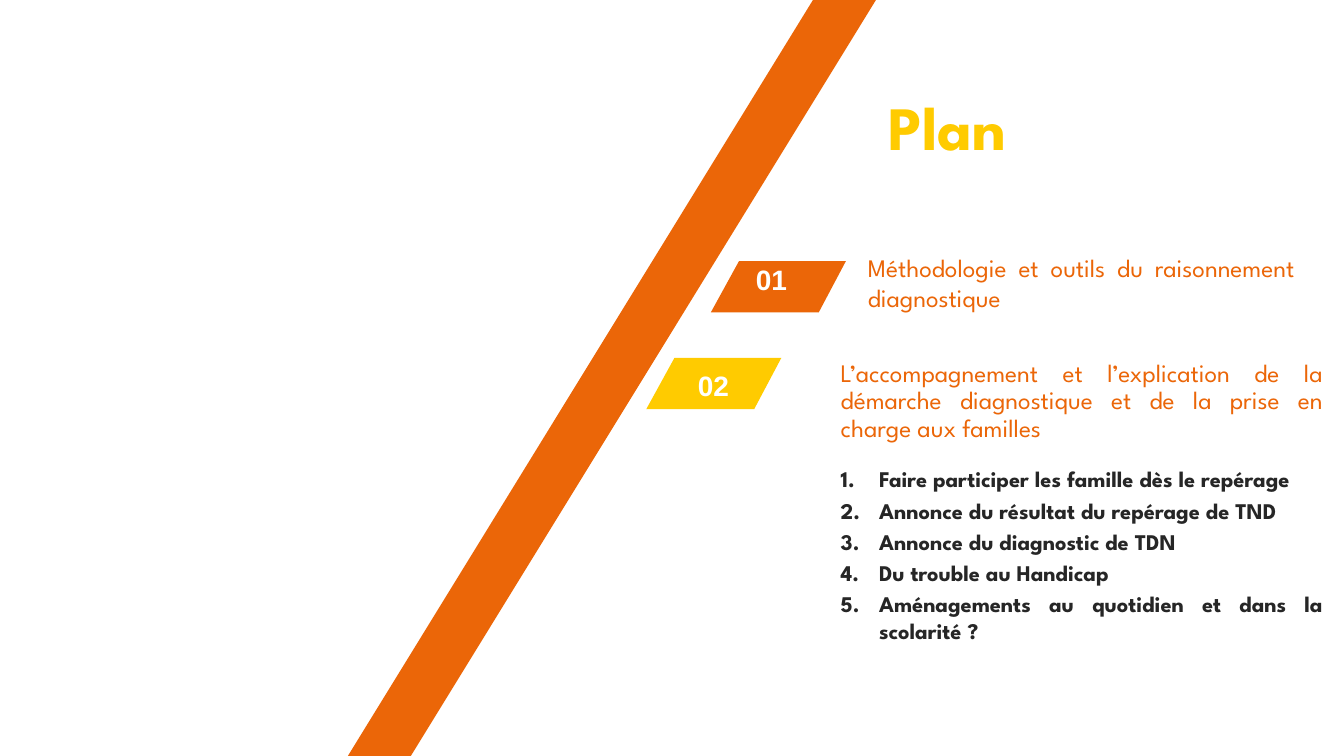
"""Build the plan slide: a slanted band, a title, two numbered tags and a list."""
from lxml.etree import SubElement
from pptx import Presentation
from pptx.dml.color import RGBColor
from pptx.enum.shapes import MSO_SHAPE as Shape
from pptx.enum.text import MSO_ANCHOR as Anchor, PP_ALIGN as Align
from pptx.oxml.ns import qn
from pptx.util import Inches, Pt

ORANGE, YELLOW, WHITE, DARK = "EB6608", "FFCB00", "FFFFFF", "262626"
SPARTAN = "League Spartan"


def paint(shape, color):
    shape.shadow.inherit = False
    shape.fill.solid()
    shape.fill.fore_color.rgb = RGBColor.from_string(color)
    shape.line.fill.background()


def add_text(place, lines, size, color, font=SPARTAN, bold=False, align=Align.JUSTIFY, anchor=Anchor.TOP):
    box = page.shapes.add_textbox(*[Inches(length) for length in place])
    frame = box.text_frame
    frame.word_wrap = True
    frame.vertical_anchor = anchor
    for index, line in enumerate(lines):
        para = frame.add_paragraph() if index else frame.paragraphs[0]
        para.alignment = align
        span = para.add_run()
        span.text = line
        span.font.name = font
        span.font.size = Pt(size)
        span.font.bold = bold
        span.font.color.rgb = RGBColor.from_string(color)
    return frame.paragraphs


deck = Presentation()
deck.slide_width, deck.slide_height = Inches(13.33), Inches(7.5)
page = deck.slides.add_slide(deck.slide_layouts[6])

tags = [
    ("01", 7.05, 2.59, ORANGE, (7.19, 2.55, 0.92, 0.44)),
    ("02", 6.41, 3.55, YELLOW, (6.67, 3.6, 0.81, 0.44)),
]
for number, left, top, color, place in tags:
    corners = [(left + x, top + y) for x, y in [(0.28, 0), (1.34, 0), (1.07, 0.51), (0, 0.51)]]
    points = [(Inches(x), Inches(y)) for x, y in corners]
    outline = page.shapes.build_freeform(*points[0])
    outline.add_line_segments(points[1:], close=True)
    paint(outline.convert_to_shape(), color)
    add_text(place, [number], 20, WHITE, "Arial", True, Align.CENTER, Anchor.MIDDLE)

add_text((8.51, 2.45, 4.43, 0.71), ["Méthodologie et outils du raisonnement diagnostique"], 18, ORANGE)

support = add_text(
    (8.24, 3.53, 4.98, 0.92),
    ["L’accompagnement et l’explication de la démarche diagnostique et de la prise en charge aux familles"],
    18, ORANGE)
support[0].line_spacing = 0.9

steps = [
    "Faire participer les famille dès le repérage",
    "Annonce du résultat du repérage de TND",
    "Annonce du diagnostic de TDN",
    "Du trouble au Handicap",
    "Aménagements au quotidien et dans la scolarité ?",
]
for para in add_text((8.24, 4.57, 4.98, 3.27), steps, 16, DARK, bold=True):
    para.space_after = Pt(3)
    properties = para._p.get_or_add_pPr()
    properties.set("marL", str(Inches(0.38)))
    properties.set("indent", str(-Inches(0.38)))
    SubElement(properties, qn("a:buFont"), typeface="+mj-lt")
    SubElement(properties, qn("a:buAutoNum"), type="arabicPeriod")

band = page.shapes.add_shape(Shape.PARALLELOGRAM, Inches(3.45), Inches(-0.02), Inches(5.25), Inches(7.52))
band.adjustments[0] = 0.881
paint(band, ORANGE)

title = add_text((8.71, 0.5, 4.12, 1.43), ["Plan"], 44, YELLOW, bold=True, align=Align.LEFT, anchor=Anchor.MIDDLE)
title[0].line_spacing = 1.1
title[0].space_before = Pt(9)

deck.save("out.pptx")
